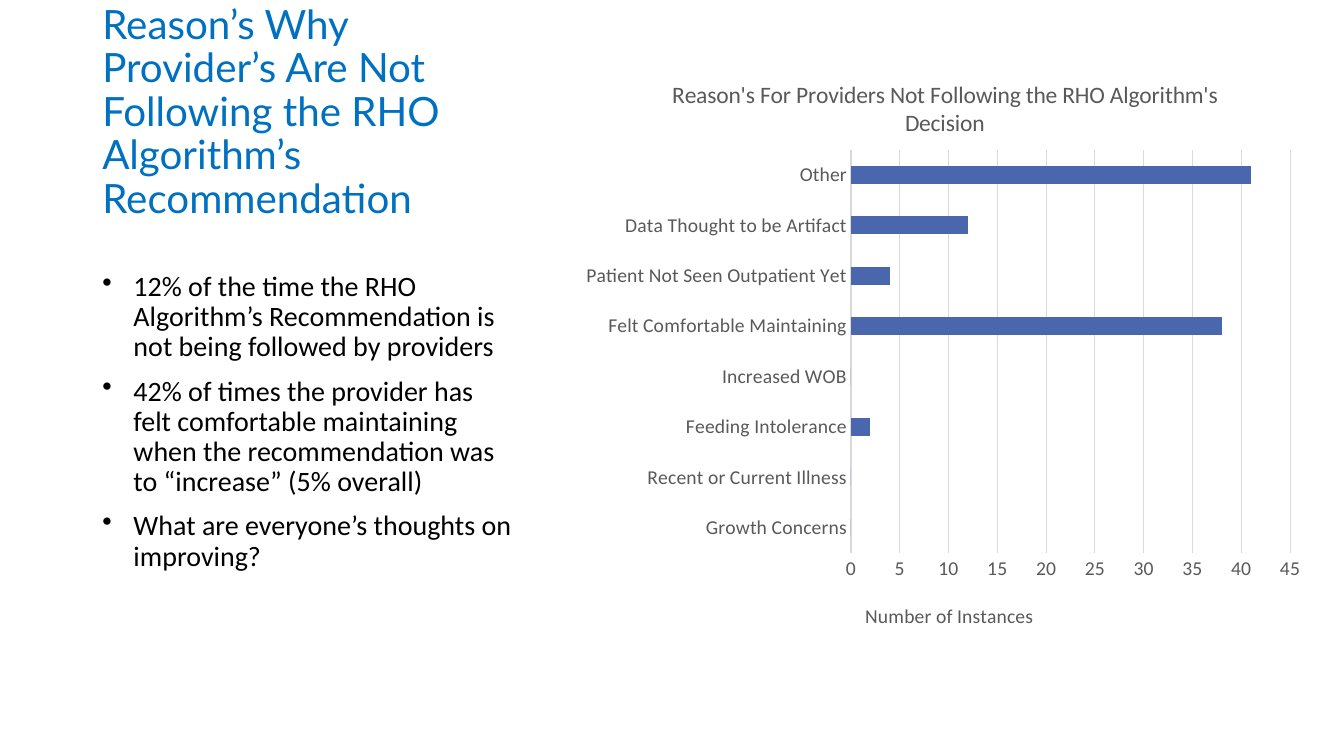
import pptx
import pptx.chart.data
import pptx.dml.color
import pptx.enum.chart
import pptx.enum.text
import pptx.oxml
import pptx.oxml.ns
import pptx.util

RGB = pptx.dml.color.RGBColor
BLUE = RGB(0x00, 0x70, 0xC0)
BLACK = RGB(0x00, 0x00, 0x00)
GRAY = RGB(0x59, 0x59, 0x59)
PALE = RGB(0xD9, 0xD9, 0xD9)
BAR = RGB(0x4A, 0x66, 0xAC)

COLS, ROWS = 160, 90
UNIT = pptx.util.Inches(1 / 12)

HEAD = "Reason’s Why Provider’s Are Not Following the RHO Algorithm’s Recommendation"
POINTS = [
    "12% of the time the RHO Algorithm’s Recommendation is not being followed by providers",
    "42% of times the provider has felt comfortable maintaining when the "
    "recommendation was to “increase” (5% overall)",
    "What are everyone’s thoughts on improving?",
]
COUNTS = {
    "Growth Concerns": 0,
    "Recent or Current Illness": 0,
    "Feeding Intolerance": 2,
    "Increased WOB": 0,
    "Felt Comfortable Maintaining": 38,
    "Patient Not Seen Outpatient Yet": 4,
    "Data Thought to be Artifact": 12,
    "Other": 41,
}


def scale(box):
    """Turn a box in grid units into slide lengths."""
    return [round(n * UNIT) for n in box]


def style(font, name, size, color):
    """Set the face, size and colour of a font."""
    font.name = name
    font.size = pptx.util.Pt(size)
    font.color.rgb = color


def add_text(slide, box):
    """Add a wrapping text box and return its frame."""
    frame = slide.shapes.add_textbox(*scale(box)).text_frame
    frame.word_wrap = True
    return frame


def add_head(slide, box):
    """Add the slide heading, resting on the bottom of its box."""
    frame = add_text(slide, box)
    frame.vertical_anchor = pptx.enum.text.MSO_ANCHOR.BOTTOM
    para = frame.paragraphs[0]
    para.text = HEAD
    para.line_spacing = 0.9
    style(para.font, "Lato", 28.8, BLUE)


def add_list(slide, box):
    """Add the bulleted points."""
    frame = add_text(slide, box)
    indent = pptx.util.Inches(0.31)
    for i, point in enumerate(POINTS):
        para = frame.add_paragraph() if i else frame.paragraphs[0]
        para.text = point
        para.line_spacing = 0.9
        if i:
            para.space_before = pptx.util.Pt(10)
        props = para._p.get_or_add_pPr()
        props.set("marL", str(indent))
        props.set("indent", str(-indent))
        mark = pptx.oxml.parse_xml(
            f'<a:buChar {pptx.oxml.ns.nsdecls("a")} char="•"/>')
        props.append(mark)
        style(para.font, "Calibri", 20, BLACK)


def place(part, inner=False, **spots):
    """Give a chart part a manual layout in shares of the chart."""
    old = part.find(pptx.oxml.ns.qn("c:layout"))
    spot = 0 if old is None else part.index(old)
    if old is not None:
        part.remove(old)
    tags = '<c:layoutTarget val="inner"/>' if inner else ""
    tags += '<c:xMode val="edge"/><c:yMode val="edge"/>'
    tags += "".join(f'<c:{key} val="{val}"/>' for key, val in spots.items())
    part.insert(spot, pptx.oxml.parse_xml(
        f'<c:layout {pptx.oxml.ns.nsdecls("c")}>'
        f"<c:manualLayout>{tags}</c:manualLayout></c:layout>"))


def add_title(title, text, size, x, y):
    """Fill, style and place a chart or axis title."""
    para = title.text_frame.paragraphs[0]
    para.text = text
    style(para.font, "Calibri", size, GRAY)
    para.font.bold = False
    place(title._element, x=x, y=y)


def add_bars(slide, box):
    """Add the bar chart of reasons."""
    data = pptx.chart.data.CategoryChartData()
    data.categories = list(COUNTS)
    data.add_series("Series 1", list(COUNTS.values()))
    kind = pptx.enum.chart.XL_CHART_TYPE.BAR_CLUSTERED
    chart = slide.shapes.add_chart(kind, *scale(box), data).chart
    style(chart.font, "Calibri", 14, GRAY)
    chart.has_legend = False
    chart.has_title = True
    add_title(chart.chart_title,
              "Reason's For Providers Not Following the RHO Algorithm's Decision",
              16.8, 0.13, 0.04)

    plot = chart.plots[0]
    plot.gap_width = 182
    plot.vary_by_categories = False
    fill = plot.series[0].format.fill
    fill.solid()
    fill.fore_color.rgb = BAR

    cats, vals = chart.category_axis, chart.value_axis
    for axis in (cats, vals):
        axis.major_tick_mark = pptx.enum.chart.XL_TICK_MARK.NONE
        axis.minor_tick_mark = pptx.enum.chart.XL_TICK_MARK.NONE
        style(axis.tick_labels.font, "Calibri", 14, GRAY)
    vals.minimum_scale, vals.maximum_scale, vals.major_unit = 0, 45, 5
    vals.has_major_gridlines = True
    for line in (cats.format.line, vals.major_gridlines.format.line):
        line.color.rgb = PALE
        line.width = pptx.util.Pt(0.75)
    vals.format.line.fill.background()
    add_title(vals.axis_title, "Number of Instances", 14, 0.39, 0.92)
    area = chart.element.find(".//" + pptx.oxml.ns.qn("c:plotArea"))
    place(area, inner=True, x=0.376, y=0.167, w=0.59, h=0.677)


def main():
    """Build and save the slide."""
    deck = pptx.Presentation()
    deck.slide_width, deck.slide_height = scale((COLS, ROWS))
    slide = deck.slides.add_slide(deck.slide_layouts[6])
    add_head(slide, (11, 6, 51.6, 21))
    add_list(slide, (11, 31.8, 51.6, 50))
    add_bars(slide, (68, 6, 88.6, 70.9))
    deck.save("out.pptx")


if __name__ == "__main__":
    main()
